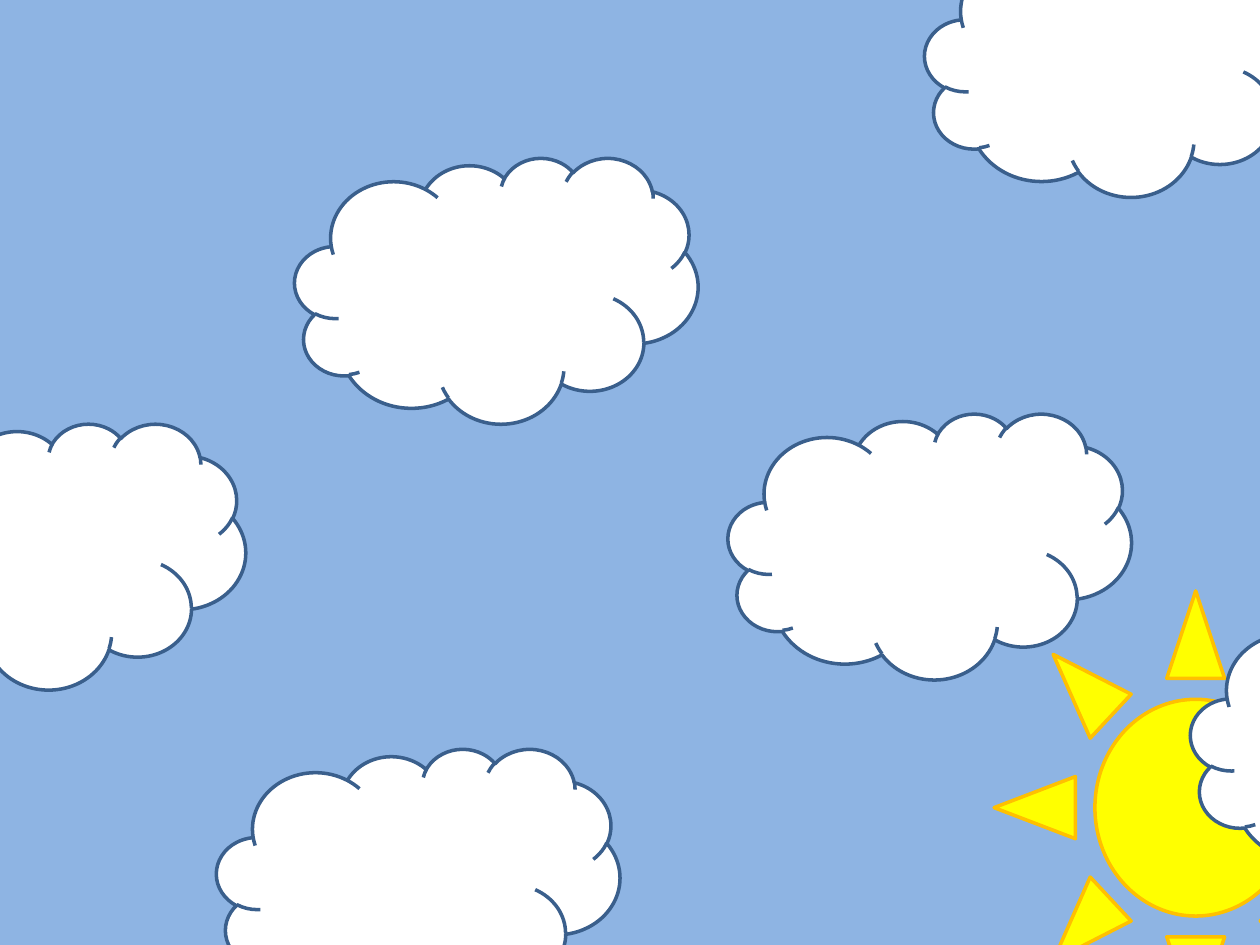
import pptx
import pptx.util
import pptx.dml.color
import pptx.enum.shapes

Inches = pptx.util.Inches
SHAPES = pptx.enum.shapes.MSO_SHAPE

SKY = "8EB4E3"
CLOUD_SIZE = (3.2, 2.11)
CLOUD_CORNERS = [
    (9.45, 4.84),
    (5.78, 3.28),
    (2.34, 1.25),
    (1.72, 5.94),
    (-1.25, 3.36),
    (7.34, -0.55),
]


def colour(hex_code):
    return pptx.dml.color.RGBColor.from_string(hex_code)


def paint_sky(slide):
    sky = slide.background.fill
    sky.solid()
    sky.fore_color.rgb = colour(SKY)


def add_outlined(slide, preset, corner, size, fill, outline):
    figure = slide.shapes.add_shape(preset, *map(Inches, corner + size))
    figure.shadow.inherit = False
    figure.fill.solid()
    figure.fill.fore_color.rgb = colour(fill)
    figure.line.color.rgb = colour(outline)
    figure.line.width = pptx.util.Pt(2)


def add_sun(slide):
    add_outlined(slide, SHAPES.SUN, (7.89, 4.69), (3.2, 3.44), "FFFF00", "FFC000")


def add_cloud(slide, corner):
    add_outlined(slide, SHAPES.CLOUD, corner, CLOUD_SIZE, "FFFFFF", "3A5F8C")


def main():
    presentation = pptx.Presentation()
    presentation.slide_width = Inches(10)
    presentation.slide_height = Inches(7.5)
    slide = presentation.slides.add_slide(presentation.slide_layouts[6])
    paint_sky(slide)
    add_sun(slide)
    for corner in CLOUD_CORNERS:
        add_cloud(slide, corner)
    presentation.save("out.pptx")


if __name__ == "__main__":
    main()
